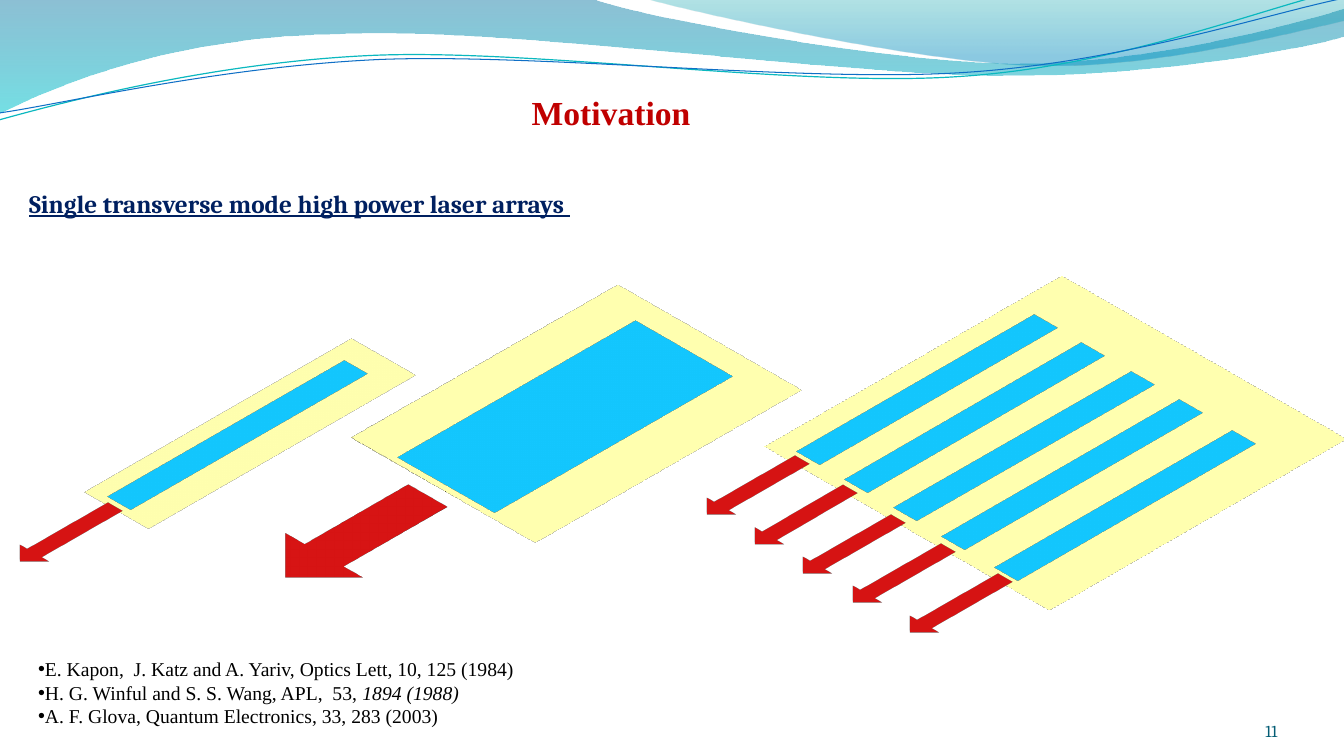
from math import cos, radians, sin

from lxml import etree
from pptx import Presentation
from pptx import util as u
from pptx.dml.color import RGBColor
from pptx.enum import shapes, text
from pptx.oxml.ns import qn

SLIDE_WIDTH, SLIDE_HEIGHT = 13.33, 7.5
BLACK = RGBColor(0x00, 0x00, 0x00)
TITLE_RED = RGBColor(0xC0, 0x00, 0x00)
NAVY = RGBColor(0x00, 0x20, 0x60)
NUMBER_TEAL = RGBColor(0x04, 0x5D, 0x75)
PLATE_YELLOW = RGBColor(0xFF, 0xFF, 0x99)
STRIPE_BLUE = RGBColor(0x00, 0xB0, 0xF0)
BEAM_RED = RGBColor(0xC0, 0x00, 0x00)
WAVE_TEAL = RGBColor(0x0A, 0xB8, 0xBF)
WAVE_BLUE = RGBColor(0x0F, 0x6F, 0xC6)
BAND_BLUE = RGBColor(0x00, 0x74, 0xA1)
BAND_CYAN = RGBColor(0x00, 0xC6, 0xCF)
CREST_TEAL = RGBColor(0x00, 0xA1, 0xA9)
CREST_BLUE = RGBColor(0x00, 0x8B, 0xBF)
SERIF, HEADING = "Times New Roman", "Cambria"
STRIPE, BEAM = (3.33, 0.33), (1.33, 0.41)
WAVE_TILT = 2.7


def add_curve(slide, start, segments, closed):
    """Add a freeform where one-point segments are lines and three-point ones Beziers."""
    builder = slide.shapes.build_freeform(*map(u.Inches, start))
    builder.add_line_segments([(u.Inches(x), u.Inches(y)) for segment in segments
                               for x, y in segment], close=closed)
    shape = builder.convert_to_shape()
    shape.shadow.inherit = False
    lines = iter(shape._element.findall(".//" + qn("a:lnTo")))
    for segment in segments:
        first = next(lines)
        if len(segment) == 3:
            first.tag_lines = None
            curve = etree.Element(qn("a:cubicBezTo"))
            first.addprevious(curve)
            for line in (first, next(lines), next(lines)):
                curve.append(line[0])
                line.getparent().remove(line)
    return shape


def add_band(slide, start, segments, stops):
    """Add a translucent band that shades from top to bottom."""
    shape = add_curve(slide, start, segments, closed=True)
    shape.line.fill.background()
    shape.fill.gradient()
    shape.fill.gradient_angle = 270
    elements = shape._element.findall(".//" + qn("a:gs"))
    for stop, element, (position, color, opacity) in zip(shape.fill.gradient_stops,
                                                         elements, stops):
        stop.position = position
        stop.color.rgb = color
        alpha = etree.SubElement(element.find(qn("a:srgbClr")), qn("a:alpha"))
        alpha.set("val", str(opacity * 1000))


def add_wave(slide, start, segments, center, color, width):
    """Add a wave line that is tilted about its centre."""
    angle = radians(WAVE_TILT)

    def level(point):
        x, y = point[0] - center[0], point[1] - center[1]
        return (center[0] + x * cos(angle) - y * sin(angle),
                center[1] + x * sin(angle) + y * cos(angle))

    wave = add_curve(slide, level(start),
                     [[level(point) for point in segment] for segment in segments],
                     closed=False)
    wave.rotation = 360 - WAVE_TILT
    wave.fill.background()
    wave.line.color.rgb = color
    wave.line.width = u.Pt(width)


def add_header(slide):
    """Draw the wavy bands and lines across the top."""
    right = SLIDE_WIDTH
    add_band(slide, (0, 0), [
        [(5.87, -0.01)],
        [(6.34, 0.17), (8.85, 0.63), (10.11, 0.63)],
        [(11.38, 0.63), (12.78, 0.26), (right, 0.09)],
        [(13.35, 0.36)],
        [(13.11, 0.44), (11.6, 0.76), (9.94, 0.75)],
        [(8.29, 0.75), (5.09, 0.28), (3.43, 0.34)],
        [(1.72, 0.36), (0.61, 0.83), (-0.01, 1.13)],
    ], [(0, BAND_BLUE, 45), (1, BAND_CYAN, 55)])
    add_band(slide, (6.39, -0.01), [
        [(6.79, 0.11), (9.09, 0.62), (10.25, 0.65)],
        [(11.41, 0.69), (12.82, 0.32), (right, 0.21)],
        [(right, 0)],
    ], [(0, CREST_TEAL, 30), (0.8, CREST_BLUE, 45)])
    add_wave(slide, (-0.01, 1.19), [
        [(0.64, 1.01), (2.11, 0.62), (3.69, 0.55)],
        [(5.27, 0.48), (7.9, 0.87), (9.5, 0.76)],
        [(11.1, 0.66), (12.52, 0.08), (13.31, -0.1)],
    ], (6.65, 0.58), WAVE_TEAL, 0.85)
    add_wave(slide, (0, 1.12), [
        [(0.63, 1.03), (2.18, 0.66), (3.78, 0.59)],
        [(5.37, 0.53), (7.96, 0.82), (9.55, 0.72)],
        [(11.15, 0.62), (12.55, 0.14), (13.34, -0.02)],
    ], (6.67, 0.59), WAVE_BLUE, 0.75)


def add_isometric(slide, kind, box, color):
    """Add a preset shape seen by an isometric camera."""
    shape = slide.shapes.add_shape(kind, *map(u.Inches, box))
    shape.shadow.inherit = False
    shape.fill.solid()
    shape.fill.fore_color.rgb = color
    shape.line.fill.background()
    scene = etree.SubElement(shape._element.spPr, qn("a:scene3d"))
    etree.SubElement(scene, qn("a:camera")).set("prst", "isometricTopUp")
    light = etree.SubElement(scene, qn("a:lightRig"))
    light.set("rig", "threePt")
    light.set("dir", "t")


def add_laser(slide, plate, stripe_size, beam_size, stripes, beams):
    """Draw a plate with stripes and beams offset from its top left corner."""
    left, top = plate[:2]
    rectangle, arrow = shapes.MSO_SHAPE.RECTANGLE, shapes.MSO_SHAPE.LEFT_ARROW
    add_isometric(slide, rectangle, plate, PLATE_YELLOW)
    for kind, offsets, size, color in ((rectangle, stripes, stripe_size, STRIPE_BLUE),
                                       (arrow, beams, beam_size, BEAM_RED)):
        for x, y in offsets:
            add_isometric(slide, kind, (left + x, top + y, *size), color)


def add_text(slide, box, paragraphs, size, font_name, color, bold=False, underline=False,
             align=text.PP_ALIGN.LEFT, wrap=True, bullet=False):
    """Add a text box whose paragraphs are lists of (words, italic) runs."""
    shape = slide.shapes.add_textbox(*map(u.Inches, box))
    frame = shape.text_frame
    frame.word_wrap = wrap
    frame.auto_size = text.MSO_AUTO_SIZE.SHAPE_TO_FIT_TEXT
    for index, runs in enumerate(paragraphs):
        paragraph = frame.add_paragraph() if index else frame.paragraphs[0]
        paragraph.alignment = align
        if bullet:
            properties = paragraph._p.get_or_add_pPr()
            etree.SubElement(properties, qn("a:buFont")).set("typeface", "Arial")
            etree.SubElement(properties, qn("a:buChar")).set("char", "•")
        for words, italic in runs:
            run = paragraph.add_run()
            run.text = words
            font = run.font
            font.name, font.size = font_name, u.Pt(size)
            font.bold, font.italic, font.underline = bold, italic, underline
            font.color.rgb = color
    return frame


def add_page_number(slide, box, number):
    """Add the page number at the bottom right of its box."""
    frame = add_text(slide, box, [[(number, False)]], 12, HEADING, NUMBER_TEAL,
                     align=text.PP_ALIGN.RIGHT)
    frame.auto_size = text.MSO_AUTO_SIZE.NONE
    frame.vertical_anchor = text.MSO_ANCHOR.BOTTOM
    frame.margin_left = frame.margin_right = frame.margin_top = frame.margin_bottom = 0


def add_motivation_slide(presentation):
    """Add the slide on laser arrays."""
    slide = presentation.slides.add_slide(presentation.slide_layouts[6])
    add_header(slide)
    add_text(slide, (3.02, 0.86, 6.08, 0.5), [[("Motivation", False)]], 24, SERIF,
             TITLE_RED, bold=True, align=text.PP_ALIGN.CENTER)
    add_page_number(slide, (11.56, 6.95, 1.11, 0.4), "11")
    add_text(slide, (0.19, 1.82, 5.79, 0.4),
             [[("Single transverse mode high power laser arrays ", False)]],
             18, HEADING, NAVY, bold=True, underline=True, wrap=False)
    add_laser(slide, (3.85, 2.81, 3.74, 2.58), (3.33, 1.36), (1.99, 1.09),
              [(0.09, 0.64)], [(-1.31, 1.97)])
    add_laser(slide, (0.61, 3.85, 3.74, 0.9), STRIPE, BEAM, [(0.08, 0.3)], [(-0.61, 1.24)])
    add_laser(slide, (8.38, 2.39, 4.18, 4), STRIPE, BEAM,
              [(-0.38, 1.59), (0.11, 1.87), (0.59, 2.15), (1.11, 2.46), (-0.85, 1.31)],
              [(-1.56, 2.24), (-1.09, 2.53), (-0.61, 2.82), (-0.11, 3.11), (0.45, 3.41)])
    add_text(slide, (0.28, 6.47, 4.96, 0.81), [
        [("E. Kapon,  J. Katz and A. Yariv, Optics Lett, 10, 125 (1984)", False)],
        [("H. G. Winful and S. S. Wang, APL,  53, ", False), ("1894 (1988)", True)],
        [("A. F. Glova, Quantum Electronics, 33, 283 (2003)", False)],
    ], 14, SERIF, BLACK, wrap=False, bullet=True)


def main():
    """Build and save the presentation."""
    presentation = Presentation()
    presentation.slide_width = u.Inches(SLIDE_WIDTH)
    presentation.slide_height = u.Inches(SLIDE_HEIGHT)
    add_motivation_slide(presentation)
    presentation.save("out.pptx")


if __name__ == "__main__":
    main()
